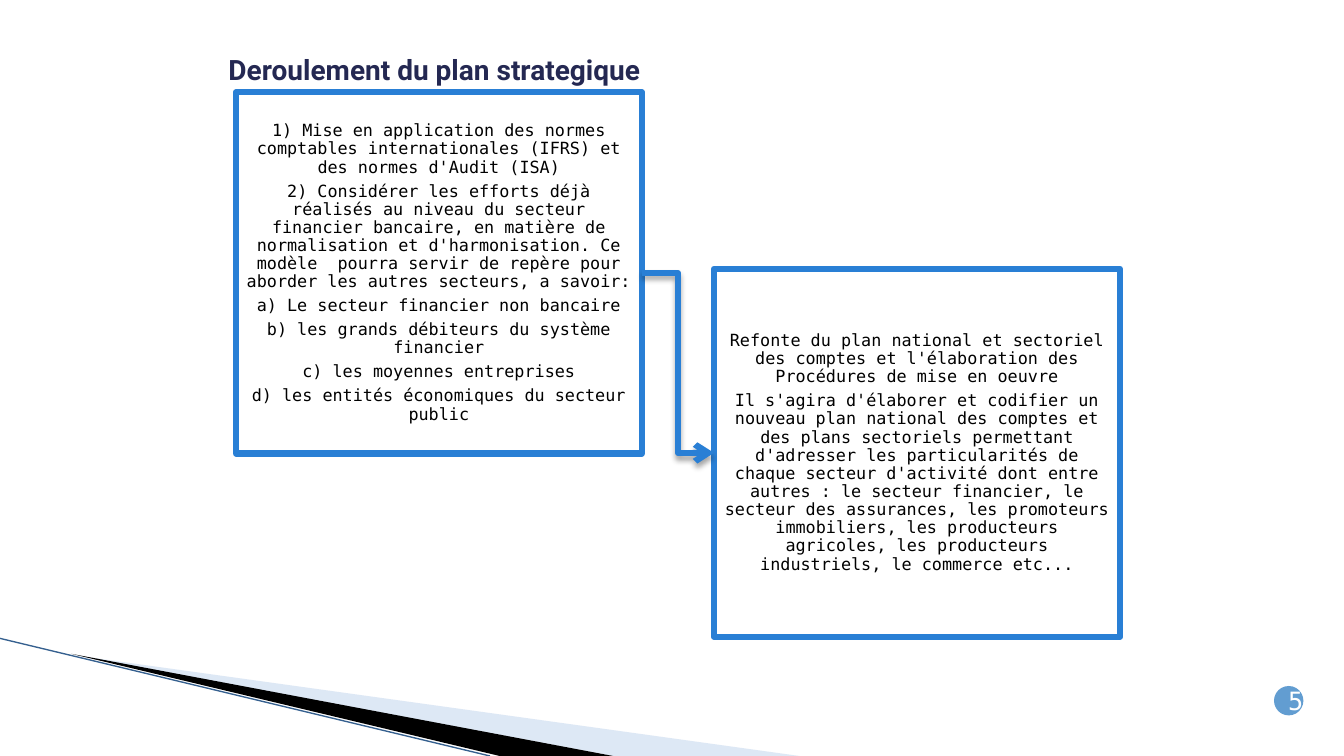
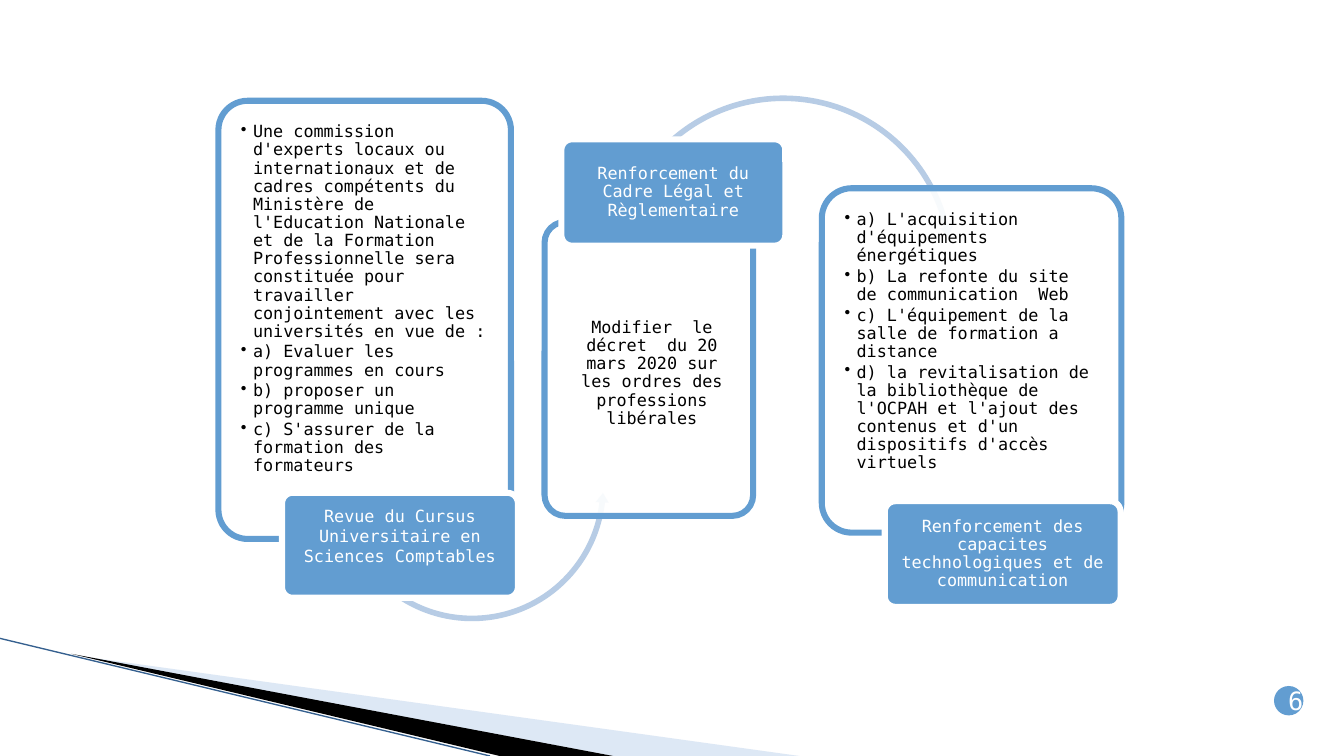
from lxml.etree import SubElement
from pptx import Presentation
from pptx.dml.color import RGBColor
from pptx.enum.shapes import MSO_CONNECTOR as Connector, MSO_SHAPE as Shape
from pptx.enum.text import MSO_ANCHOR as Anchor, PP_ALIGN as Align
from pptx.oxml.ns import qn
from pptx.util import Pt

TITLE_ONLY, BLANK = 5, 6


def color(hex_text):
    return RGBColor.from_string(hex_text)


class SlideBuilder:
    """Holds the shared style and the slide being filled."""

    BODY_FONT, TITLE_FONT = "DejaVu Sans Mono", "Roboto"
    BLACK, WHITE, NAVY = "000000", "FFFFFF", "242852"
    FRAME_BLUE, PANEL_BLUE = "297FD5", "629DD1"
    ARC_BLUE, BAND_BLUE, EDGE_BLUE = "B7CCE5", "ABC6E6", "35608F"
    BODY_SIZE, BORDER = 12, 4.33

    def __init__(self):
        self.deck = Presentation()
        self.deck.slide_width, self.deck.slide_height = Pt(960), Pt(540)
        self.slide = None

    def new_slide(self, number, title=None):
        layout = self.deck.slide_layouts[TITLE_ONLY if title else BLANK]
        self.slide = self.deck.slides.add_slide(layout)
        self.corner_bands()
        if title:
            self.title(title)
        self.page_number(number)

    # Shared parts
    def corner_bands(self):
        self.band([(52.5, 468), (571, 540), (438, 540)], self.BAND_BLUE, 40)
        self.band([(51, 467), (438, 540), (357, 540)], self.BLACK)
        edge = self.slide.shapes.add_connector(
            Connector.STRAIGHT, Pt(0), Pt(456), Pt(350), Pt(540))
        edge.line.color.rgb = color(self.EDGE_BLUE)
        edge.line.width = Pt(0.95)
        SubElement(edge._element.spPr, qn("a:effectLst"))

    def band(self, corners, fill, opacity=100):
        points = [(Pt(x), Pt(y)) for x, y in corners]
        builder = self.slide.shapes.build_freeform(*points[0], scale=1.0)
        builder.add_line_segments(points[1:], close=True)
        self.paint(builder.convert_to_shape(), fill, opacity=opacity)

    def title(self, text):
        box = self.slide.shapes.title
        box.left, box.top, box.width, box.height = Pt(156), Pt(21.5), Pt(648), Pt(56)
        frame = box.text_frame
        frame.text = text
        frame.word_wrap = True
        frame.vertical_anchor = Anchor.MIDDLE
        para = frame.paragraphs[0]
        para.alignment = Align.LEFT
        self.style_run(para.runs[0], 20, self.NAVY, self.TITLE_FONT, bold=True)

    def page_number(self, number):
        disc = self.shape(Shape.OVAL, (910, 490, 21, 21), self.PANEL_BLUE)
        self.set_text(disc, [str(number)], self.WHITE, size=18,
                      margins=(7.2, 3.6, 7.2, 3.6), line_spacing=1, gap=0)

    # Formatting helpers
    def paint(self, shape, fill, line=None, opacity=100):
        shape.shadow.inherit = False
        shape.fill.solid()
        shape.fill.fore_color.rgb = color(fill)
        if opacity < 100:
            paint = shape._element.spPr.find(qn("a:solidFill"))[0]
            SubElement(paint, qn("a:alpha"), val=str(opacity * 1000))
        if line:
            shape.line.color.rgb = color(line)
            shape.line.width = Pt(self.BORDER)
        else:
            shape.line.fill.background()

    def shape(self, kind, place, fill, line=None, opacity=100):
        shape = self.slide.shapes.add_shape(kind, *map(Pt, place))
        self.paint(shape, fill, line, opacity)
        return shape

    def style_run(self, span, size, ink, face, bold=False):
        span.font.size, span.font.name = Pt(size), face
        span.font.bold = bold
        span.font.color.rgb = color(ink)

    def set_text(self, shape, texts, ink, margins, size=BODY_SIZE,
                 anchor=Anchor.MIDDLE, line_spacing=0.9, gap=4.2, bullets=False):
        frame = shape.text_frame
        frame.word_wrap = True
        frame.vertical_anchor = anchor
        (frame.margin_left, frame.margin_top,
         frame.margin_right, frame.margin_bottom) = map(Pt, margins)
        frame.text = "\n".join(texts)
        for para in frame.paragraphs:
            if bullets:
                self.add_bullet(para)
            para.alignment = Align.LEFT if bullets else Align.CENTER
            para.line_spacing = line_spacing
            para.space_after = Pt(gap)
            for span in para.runs:
                self.style_run(span, size, ink, self.BODY_FONT)

    def add_bullet(self, para):
        indent = Pt(8.64)
        properties = para._p.get_or_add_pPr()
        properties.set("marL", str(indent))
        properties.set("indent", str(-indent))
        SubElement(properties, qn("a:buChar"), char="•")

    # Elements of the two diagrams
    def step_box(self, place, texts):
        box = self.shape(Shape.RECTANGLE, place, self.WHITE, self.FRAME_BLUE)
        self.set_text(box, texts, self.BLACK, margins=(6.5,) * 4)
        return box

    def elbow_arrow(self, source, target):
        arrow = self.slide.shapes.add_connector(Connector.ELBOW, 0, 0, 0, 0)
        arrow.begin_connect(source, 3)
        arrow.end_connect(target, 1)
        arrow.line.color.rgb = color(self.FRAME_BLUE)
        arrow.line.width = Pt(self.BORDER)
        properties = arrow._element.spPr
        SubElement(properties.find(qn("a:ln")), qn("a:tailEnd"), type="arrow")
        effects = SubElement(properties, qn("a:effectLst"))
        shadow = SubElement(effects, qn("a:outerShdw"), blurRad=str(Pt(4)),
                            dist=str(Pt(3)), dir="5400000", rotWithShape="0")
        ink = SubElement(shadow, qn("a:srgbClr"), val=self.BLACK)
        SubElement(ink, qn("a:alpha"), val="35000")

    def panel(self, place, texts, bullets=True, margins=(10,) * 4):
        panel = self.shape(Shape.ROUNDED_RECTANGLE, place, self.WHITE,
                           self.PANEL_BLUE, opacity=90)
        panel.adjustments[0] = 0.1
        self.set_text(panel, texts, self.BLACK, margins, anchor=Anchor.TOP,
                      gap=1.8, bullets=bullets)

    def label(self, place, text, line_spacing=0.9, bottom=2):
        label = self.shape(Shape.ROUNDED_RECTANGLE, place, self.PANEL_BLUE, self.WHITE)
        label.adjustments[0] = 0.1
        self.set_text(label, [text], self.WHITE, (2, 2, 2, bottom),
                      line_spacing=line_spacing)

    def arc_arrow(self, kind, left, top, size, degrees):
        """Degrees: arrowhead sweep, end angle, start angle."""
        arc = self.shape(kind, (left, top, size, size), self.ARC_BLUE)
        angles = [angle * 0.6 for angle in degrees]
        for index, value in enumerate([4 / size, *angles, 4.7 / size]):
            arc.adjustments[index] = value


def strategy_slide(builder):
    builder.new_slide(5, "Deroulement du plan strategique")
    norms = builder.step_box((168.5, 66, 290, 258), [
        "1) Mise en application des normes comptables internationales (IFRS) et "
        "des normes d'Audit (ISA)",
        "2) Considérer les efforts déjà réalisés au niveau du secteur financier "
        "bancaire, en matière de normalisation et d'harmonisation. Ce modèle  pourra "
        "servir de repère pour aborder les autres secteurs, a savoir:",
        "a) Le secteur financier non bancaire",
        "b) les grands débiteurs du système financier",
        "c) les moyennes entreprises",
        "d) les entités économiques du secteur public",
    ])
    redesign = builder.step_box((510, 192, 290, 263), [
        "Refonte du plan national et sectoriel des comptes et l'élaboration des "
        "Procédures de mise en oeuvre",
        "Il s'agira d'élaborer et codifier un nouveau plan national des comptes et "
        "des plans sectoriels permettant d'adresser les particularités de chaque "
        "secteur d'activité dont entre autres : le secteur financier, le secteur des "
        "assurances, les promoteurs immobiliers, les producteurs agricoles, les "
        "producteurs industriels, le commerce etc...",
    ])
    builder.elbow_arrow(norms, redesign)


def reinforcement_slide(builder):
    builder.new_slide(6)

    # University curriculum
    builder.panel((156, 72, 209, 313), [
        "Une commission d'experts locaux ou internationaux et de cadres compétents du "
        "Ministère de l'Education Nationale et de la Formation Professionnelle sera "
        "constituée pour travailler conjointement avec les universités en vue de :",
        "a) Evaluer les programmes en cours",
        "b) proposer un programme unique",
        "c) S'assurer de la formation des formateurs",
    ])
    builder.arc_arrow(Shape.LEFT_CIRCULAR_ARROW, 239, 250, 196.5, (4.15, 6.55, 123.22))
    builder.label((201.5, 352, 168.5, 75),
                  "Revue du Cursus Universitaire en Sciences Comptables",
                  line_spacing=1, bottom=15.5)

    # Legal framework
    builder.panel((389, 158.5, 149, 210), [
        "Modifier  le décret  du 20 mars 2020 sur les ordres des professions libérales",
    ], bullets=False, margins=(14.5, 65, 10, 10))
    builder.arc_arrow(Shape.CIRCULAR_ARROW, 435, 65.5, 249, (3.24, 346.6, 229.03))
    builder.label((401, 99.5, 160, 76), "Renforcement du Cadre Légal et Règlementaire")

    # Technology and communication
    builder.panel((587, 134.5, 214, 246), [
        "a) L'acquisition d'équipements énergétiques",
        "b) La refonte du site de communication  Web",
        "c) L'équipement de la salle de formation a distance",
        "d) la revitalisation de la bibliothèque de l'OCPAH et l'ajout des contenus et "
        "d'un dispositifs d'accès virtuels",
    ])
    builder.label((632, 358, 168.5, 75.5),
                  "Renforcement des capacites technologiques et de communication")


def main():
    builder = SlideBuilder()
    strategy_slide(builder)
    reinforcement_slide(builder)
    builder.deck.save("out.pptx")


if __name__ == "__main__":
    main()
